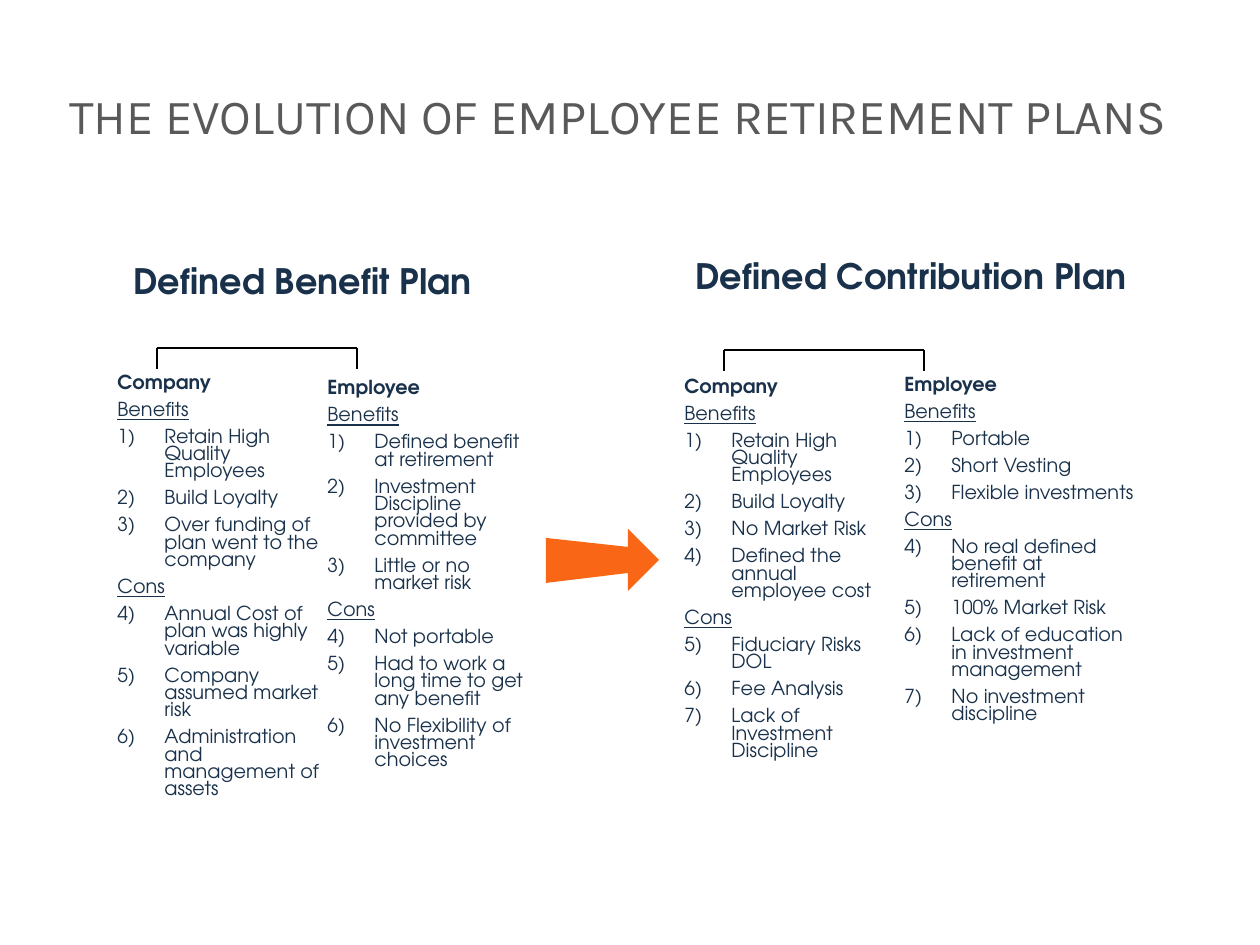
from lxml.etree import SubElement
from pptx import Presentation
from pptx.dml.color import RGBColor
from pptx.enum.shapes import MSO_CONNECTOR as Connector
from pptx.enum.text import MSO_ANCHOR as Anchor, MSO_AUTO_SIZE as AutoSize, PP_ALIGN as Align
from pptx.oxml.ns import qn
from pptx.util import Emu, Pt

EMU_PER_PX = 914400 / 126
TITLE_ONLY = 5


def px(length):
    return Emu(round(length * EMU_PER_PX))


def color(hex_text):
    return RGBColor.from_string(hex_text)


class PlanSlide:
    """Holds the style and the current slide."""
    title_font, body_font = "Karla", "TeX Gyre Adventor"
    gray, navy, orange, black = "595959", "19314A", "F96616", "000000"
    indent = 47

    def __init__(self, deck):
        self.page = deck.slides.add_slide(deck.slide_layouts[TITLE_ONLY])

    def format_runs(self, para, name, size, hex_text, bold=False, underline=False):
        for span in para.runs:
            font = span.font
            font.name, font.size = name, Pt(size)
            font.bold, font.underline = bold, underline
            font.color.rgb = color(hex_text)

    def title(self, text, left, top, width, height):
        box = self.page.shapes.title
        box.left, box.top, box.width, box.height = map(px, (left, top, width, height))
        frame = box.text_frame
        frame.text = text
        frame.word_wrap, frame.auto_size = True, AutoSize.NONE
        frame.vertical_anchor, frame.margin_left = Anchor.BOTTOM, px(0)
        para = frame.paragraphs[0]
        para.alignment, para.line_spacing = Align.LEFT, 0.9
        self.format_runs(para, self.title_font, 28, self.gray)

    def text_box(self, left, top, width, height):
        box = self.page.shapes.add_textbox(*map(px, (left, top, width, height)))
        box.text_frame.word_wrap = True
        return box.text_frame

    def heading(self, text, left, top, width):
        frame = self.text_box(left, top, width, 55)
        frame.text = text
        self.format_runs(frame.paragraphs[0], self.body_font, 20, self.navy, bold=True)

    def list_line(self, para, text, start=None, bold=False, underline=False, spacing=0.75):
        para.text = text
        para.line_spacing = spacing
        properties = para._p.get_or_add_pPr()
        properties.set("marL", str(px(self.indent)))
        properties.set("indent", str(-px(self.indent)))
        if start:
            number = SubElement(properties, qn("a:buAutoNum"), type="arabicParenR")
            if start > 1:
                number.set("startAt", str(start))
        self.format_runs(para, self.body_font, 11, self.navy, bold, underline)

    def pros_and_cons(self, left, top, width, height, party, benefits, cons, spacing=0.75):
        frame = self.text_box(left, top, width, height)

        def next_para():
            para = frame.add_paragraph()
            para.space_before = Pt(5.5)
            return para

        self.list_line(frame.paragraphs[0], party, bold=True, spacing=spacing)
        start = 1
        for label, items in (("Benefits", benefits), ("Cons", cons)):
            self.list_line(next_para(), label, underline=True)
            for item in items:
                self.list_line(next_para(), item, start=start)
            start += len(items)

    def line(self, *ends):
        line = self.page.shapes.add_connector(Connector.STRAIGHT, *map(px, ends))
        line.line.color.rgb, line.line.width = color(self.black), Pt(0.75)
        SubElement(line._element.spPr, qn("a:effectLst"))

    def bracket(self, left, top, width=200, drop=21):
        right = left + width
        self.line(left, top, right, top)
        for x in (left, right):
            self.line(x, top, x, top + drop)

    def outline(self, points):
        builder = self.page.shapes.build_freeform(*points[0], scale=EMU_PER_PX)
        builder.add_line_segments(points[1:], close=True)
        shape = builder.convert_to_shape()
        shape.fill.solid()
        shape.fill.fore_color.rgb = color(self.orange)
        shape.line.fill.background()
        shape.shadow.inherit = False


def main():
    deck = Presentation()
    deck.slide_width, deck.slide_height = px(1260), px(945)
    slide = PlanSlide(deck)
    slide.title("THE EVOLUTION OF EMPLOYEE RETIREMENT PLANS", 69, 44, 1191, 107)

    # Defined benefit plan
    slide.heading("Defined Benefit Plan", 121, 253, 408)
    slide.bracket(157, 348)
    slide.pros_and_cons(
        105, 369, 231, 438, "Company",
        ["Retain High Quality Employees", "Build Loyalty",
         "Over funding of plan went to the company"],
        ["Annual Cost of plan was highly variable", "Company assumed market risk",
         "Administration and management of assets"])
    slide.pros_and_cons(
        315, 369, 231, 427, "Employee",
        ["Defined benefit at retirement",
         "Investment Discipline provided by committee", "Little or no market risk"],
        ["Not portable", "Had to work a long time to get any benefit",
         "No Flexibility of investment choices"], spacing=1.0)

    # Arrow from the old plan to the new one
    slide.outline([(546, 538), (628, 547), (628, 529), (659, 560),
                   (628, 591), (628, 573), (546, 583)])

    # Defined contribution plan
    slide.heading("Defined Contribution Plan", 683, 248, 470)
    slide.bracket(724, 350)
    slide.pros_and_cons(
        672, 373, 231, 416, "Company",
        ["Retain High Quality Employees", "Build Loyalty", "No Market Risk",
         "Defined the annual employee cost"],
        ["Fiduciary Risks DOL", "Fee Analysis", "Lack of Investment Discipline"])
    slide.pros_and_cons(
        892, 371, 262, 407, "Employee",
        ["Portable", "Short Vesting", "Flexible investments"],
        ["No real defined benefit at retirement", "100% Market Risk",
         "Lack of education in investment management", "No investment discipline"])

    deck.save("out.pptx")


if __name__ == "__main__":
    main()
